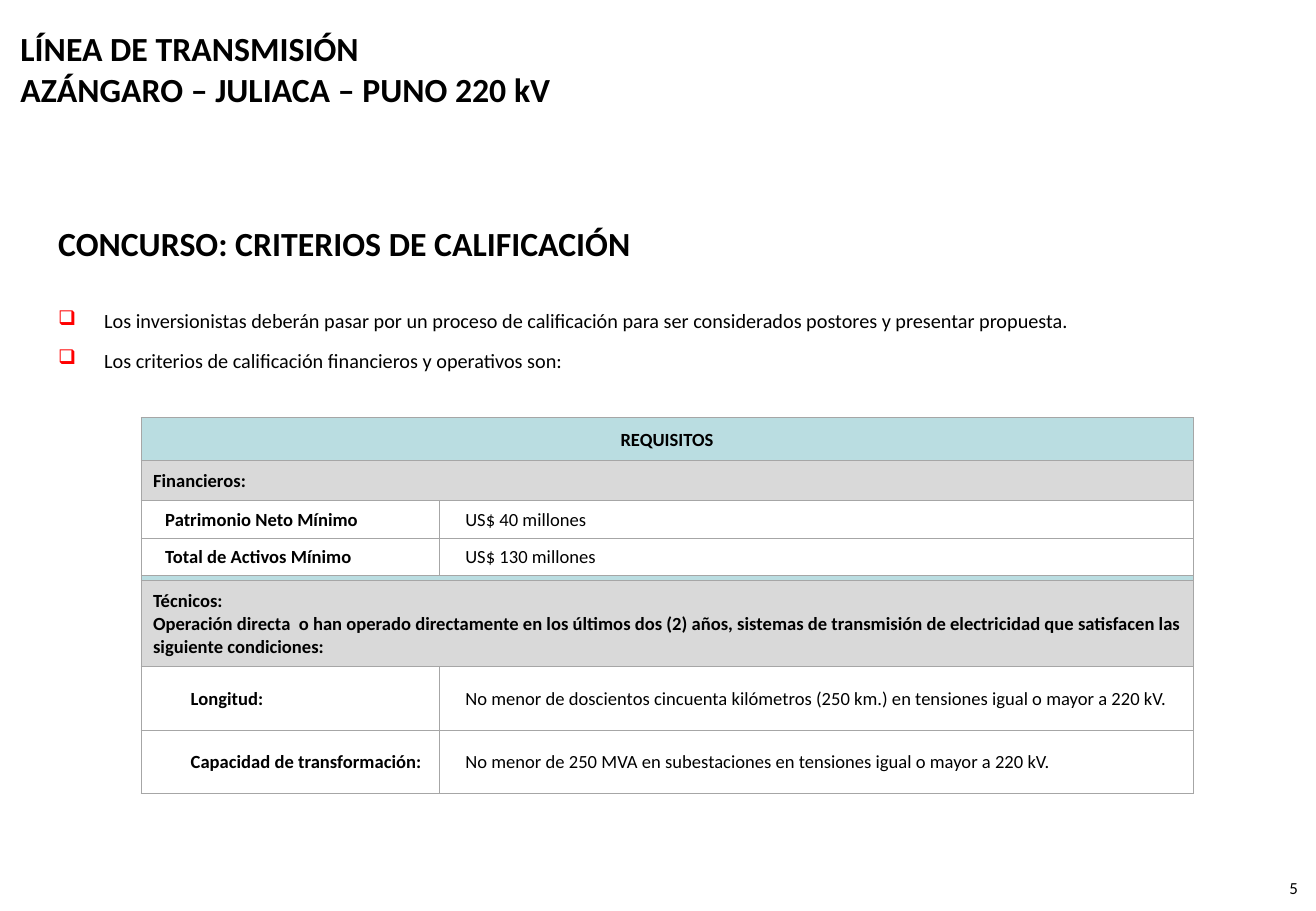
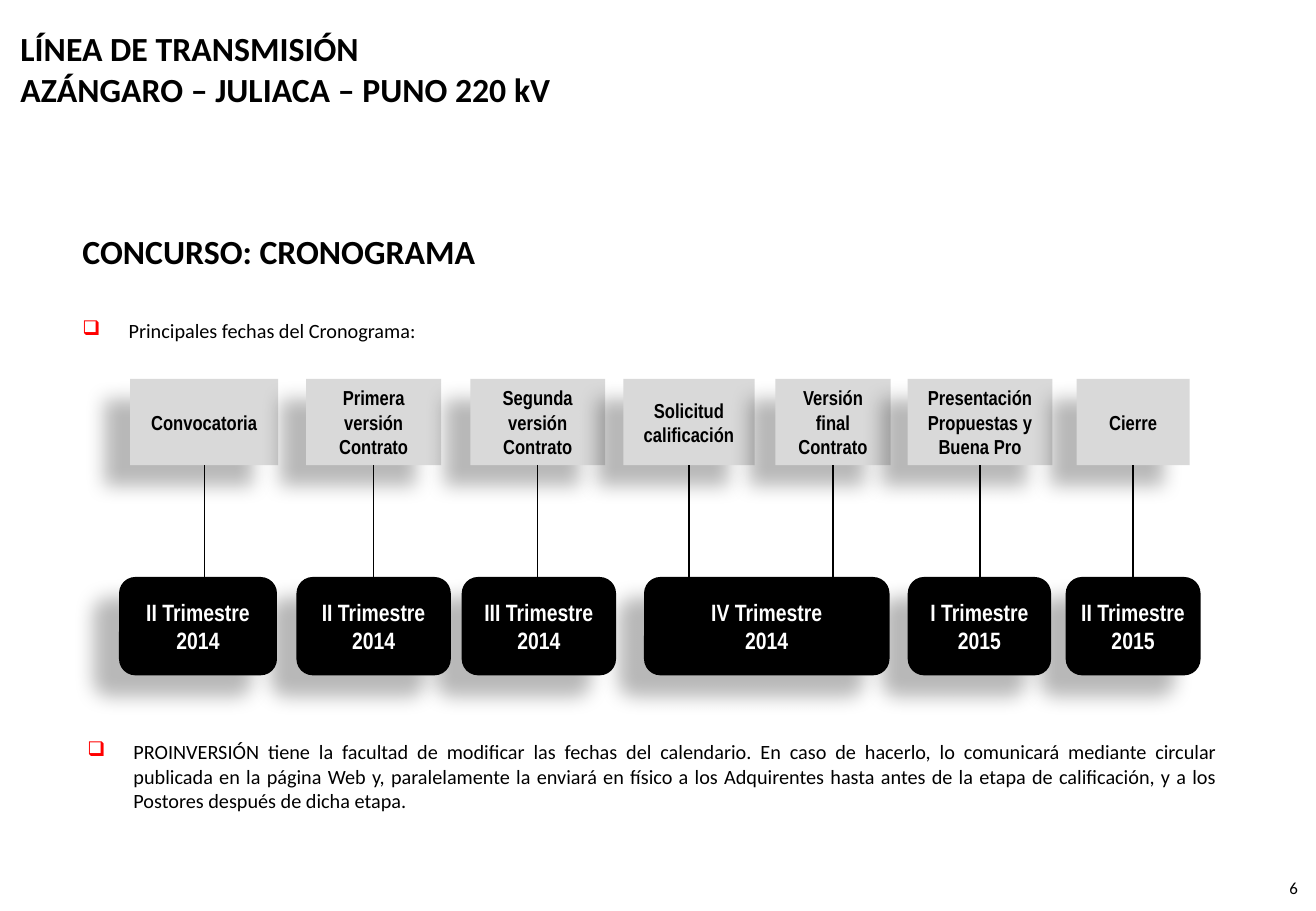
from lxml import etree
from pptx import Presentation
from pptx.dml.color import RGBColor
from pptx.enum.shapes import MSO_CONNECTOR, MSO_SHAPE
from pptx.enum.text import MSO_ANCHOR, PP_ALIGN
from pptx.oxml.ns import qn
from pptx.util import Inches, Pt

LEFT, CENTER, RIGHT, JUSTIFY = PP_ALIGN.LEFT, PP_ALIGN.CENTER, PP_ALIGN.RIGHT, PP_ALIGN.JUSTIFY
TOP, MIDDLE = MSO_ANCHOR.TOP, MSO_ANCHOR.MIDDLE
RECTANGLE, ROUNDED = MSO_SHAPE.RECTANGLE, MSO_SHAPE.ROUNDED_RECTANGLE
STRAIGHT = MSO_CONNECTOR.STRAIGHT

BLACK = RGBColor(0x00, 0x00, 0x00)
WHITE = RGBColor(0xFF, 0xFF, 0xFF)
RED = RGBColor(0xFF, 0x00, 0x00)
TEAL = RGBColor(0xBA, 0xDD, 0xE1)
LIGHT_GRAY = RGBColor(0xD9, 0xD9, 0xD9)
BORDER_GRAY = RGBColor(0xA6, 0xA6, 0xA6)
BODY_FONT, CHART_FONT = "Calibri", "Arial Narrow"

TITLE = ["LÍNEA DE TRANSMISIÓN", "AZÁNGARO – JULIACA – PUNO 220 kV"]

CRITERIA = [
    "Los inversionistas deberán pasar por un proceso de calificación para ser considerados postores y presentar propuesta.",
    "Los criterios de calificación financieros y operativos son:",
]
COLUMN_WIDTHS = [2.46, 6.2]
REQUIREMENTS = [
    (0.35, TEAL, CENTER, 0.01, [["REQUISITOS"]]),
    (0.33, LIGHT_GRAY, LEFT, 0.1, [["Financieros:"]]),
    (0.31, None, LEFT, 0.2, [["Patrimonio Neto Mínimo"], ["US$ 40 millones"]]),
    (0.31, None, LEFT, 0.2, [["Total de Activos Mínimo"], ["US$ 130 millones"]]),
    (0.04, TEAL, LEFT, 0, [[]]),
    (0.71, LIGHT_GRAY, LEFT, 0.1, [[
        "Técnicos:",
        "Operación directa  o han operado directamente en los últimos dos (2) años, sistemas de "
        "transmisión de electricidad que satisfacen las siguiente condiciones:",
    ]]),
    (0.52, None, LEFT, 0.41, [
        ["Longitud:"],
        ["No menor de doscientos cincuenta kilómetros (250 km.) en tensiones igual o mayor a 220 kV."],
    ]),
    (0.52, None, LEFT, 0.41, [
        ["Capacidad de transformación:"],
        ["No menor de 250 MVA en subestaciones en tensiones igual o mayor a 220 kV."],
    ]),
]

MILESTONE_TOP, MILESTONE_HEIGHT = 3.12, 0.71
QUARTER_TOP, QUARTER_HEIGHT = 4.75, 0.81
MILESTONES = [
    (1.07, 1.22, "Convocatoria"),
    (2.52, 1.11, "Primera versión Contrato"),
    (3.87, 1.11, "Segunda versión Contrato"),
    (5.13, 1.08, "Solicitud calificación"),
    (6.38, 0.95, "Versión final Contrato"),
    (7.47, 1.19, "Presentación Propuestas y Buena Pro"),
    (8.86, 0.93, "Cierre"),
]
QUARTERS = [
    (0.98, 1.3, "II", "2014"),
    (2.44, 1.27, "II", "2014"),
    (3.8, 1.27, "III", "2014"),
    (5.3, 2.02, "IV", "2014"),
    (7.47, 1.18, "I", "2015"),
    (8.77, 1.11, "II", "2015"),
]
CALENDAR_NOTE = (
    "PROINVERSIÓN tiene la facultad de modificar las fechas del calendario. En caso de hacerlo, "
    "lo comunicará mediante circular publicada en la página Web y, paralelamente la enviará en "
    "físico a los Adquirentes hasta antes de la etapa de calificación, y a los Postores después "
    "de dicha etapa."
)


def add_child(parent, tag, **attributes):
    return etree.SubElement(parent, qn(tag), {key: str(value) for key, value in attributes.items()})


def add_color(parent, color):
    return add_child(add_child(parent, "a:solidFill"), "a:srgbClr", val=color)


def write(frame, lines, size, color=BLACK, bold=False, font=BODY_FONT, align=LEFT):
    for index, line in enumerate(lines):
        paragraph = frame.paragraphs[0] if index == 0 else frame.add_paragraph()
        paragraph.alignment = align
        run = paragraph.add_run()
        run.text = line
        run.font.name = font
        run.font.size = Pt(size)
        run.font.bold = bold
        run.font.color.rgb = color


def add_text(slide, box, lines, size, anchor=TOP, **style):
    frame = slide.shapes.add_textbox(*map(Inches, box)).text_frame
    frame.word_wrap = True
    frame.vertical_anchor = anchor
    write(frame, lines, size, **style)
    return frame


def add_heading(slide, box, text):
    add_text(slide, box, [text], 20, MIDDLE, bold=True)


def add_bullets(slide, box, lines, align=LEFT):
    frame = add_text(slide, box, lines, 12, align=align)
    hang = Inches(0.38)
    for paragraph in frame.paragraphs:
        paragraph.space_after = Pt(9)
        properties = paragraph._p.get_or_add_pPr()
        properties.set("marL", str(hang))
        properties.set("indent", str(-hang))
        add_child(add_child(properties, "a:buClr"), "a:srgbClr", val=RED)
        add_child(properties, "a:buChar", char="❑")


def add_shadow(shape):
    effects = add_child(shape._element.spPr, "a:effectLst")
    shadow = add_child(effects, "a:outerShdw", blurRad=Pt(11.8), dist=Pt(19.7),
                       dir=141 * 60000, algn="ctr", rotWithShape=0)
    color = add_child(shadow, "a:srgbClr", val=BLACK)
    add_child(color, "a:alpha", val=28000)


def add_block(slide, kind, box, fill, lines, size, color, wrap):
    block = slide.shapes.add_shape(kind, *map(Inches, box))
    block.fill.solid()
    block.fill.fore_color.rgb = fill
    block.line.fill.background()
    add_shadow(block)
    frame = block.text_frame
    frame.word_wrap = wrap
    frame.vertical_anchor = MIDDLE
    write(frame, lines, size, color, True, CHART_FONT, CENTER)


def add_drop_line(slide, x, top, bottom):
    line = slide.shapes.add_connector(STRAIGHT, *map(Inches, (x, top, x, bottom)))
    line.line.color.rgb = BLACK
    line.line.width = Pt(0.75)
    add_child(line._element.spPr, "a:effectLst")


def format_cell(cell, fill, margin):
    cell.vertical_anchor = MIDDLE
    cell.margin_left = Inches(margin)
    cell.margin_right = cell.margin_top = Inches(0.01 if margin else 0)
    cell.margin_bottom = 0
    properties = cell._tc.get_or_add_tcPr()
    for side in ("a:lnL", "a:lnR", "a:lnT", "a:lnB"):
        add_color(add_child(properties, side, w=Pt(0.5)), BORDER_GRAY)
    if fill is None:
        cell.fill.background()
    else:
        cell.fill.solid()
        cell.fill.fore_color.rgb = fill


def add_requirements(slide, left, top):
    heights = [row[0] for row in REQUIREMENTS]
    size = (sum(COLUMN_WIDTHS), sum(heights))
    table = slide.shapes.add_table(len(heights), len(COLUMN_WIDTHS),
                                   *map(Inches, (left, top, *size))).table
    table.first_row = table.horz_banding = False
    for column, width in zip(table.columns, COLUMN_WIDTHS):
        column.width = Inches(width)
    for index, (height, fill, align, margin, texts) in enumerate(REQUIREMENTS):
        table.rows[index].height = Inches(height)
        label, value = table.cell(index, 0), table.cell(index, 1)
        format_cell(label, fill, margin)
        format_cell(value, fill, margin and 0.21)
        if len(texts) == 1:
            label.merge(value)
        else:
            write(value.text_frame, texts[1], 11)
        if texts[0]:
            write(label.text_frame, texts[0], 11, bold=True, align=align)
        else:
            for cell in (label, value):
                add_child(cell.text_frame.paragraphs[0]._p, "a:endParaRPr", sz=100)


def add_slide(deck, number):
    slide = deck.slides.add_slide(deck.slide_layouts[6])
    add_text(slide, (0.07, 0.13, 5.61, 0.87), TITLE, 20, MIDDLE, bold=True)
    add_text(slide, (10.24, 7.18, 0.54, 0.32), [str(number)], 10, align=RIGHT)
    return slide


def build_criteria(deck):
    slide = add_slide(deck, 5)
    add_heading(slide, (0.38, 1.7, 5.58, 0.6), "CONCURSO: CRITERIOS DE CALIFICACIÓN")
    add_bullets(slide, (0.38, 2.49, 10.27, 0.75), CRITERIA)
    add_requirements(slide, 1.16, 3.44)


def build_schedule(deck):
    slide = add_slide(deck, 6)
    add_heading(slide, (0.58, 1.78, 4.01, 0.58), "CONCURSO: CRONOGRAMA")
    add_bullets(slide, (0.58, 2.57, 3.29, 0.31), ["Principales fechas del Cronograma:"], JUSTIFY)
    for left, width, label in MILESTONES:
        add_block(slide, RECTANGLE, (left, MILESTONE_TOP, width, MILESTONE_HEIGHT),
                  LIGHT_GRAY, [label], 12, BLACK, True)
    for left, width, quarter, year in QUARTERS:
        add_block(slide, ROUNDED, (left, QUARTER_TOP, width, QUARTER_HEIGHT),
                  BLACK, [f"{quarter} Trimestre", year], 14, WHITE, False)
    for left, width, label in MILESTONES:
        add_drop_line(slide, left + width / 2, MILESTONE_TOP + MILESTONE_HEIGHT, QUARTER_TOP)
    add_bullets(slide, (0.62, 6.04, 9.5, 0.71), [CALENDAR_NOTE], JUSTIFY)


def main():
    deck = Presentation()
    deck.slide_width, deck.slide_height = Inches(10.83), Inches(7.5)
    build_criteria(deck)
    build_schedule(deck)
    deck.save("out.pptx")


if __name__ == "__main__":
    main()
